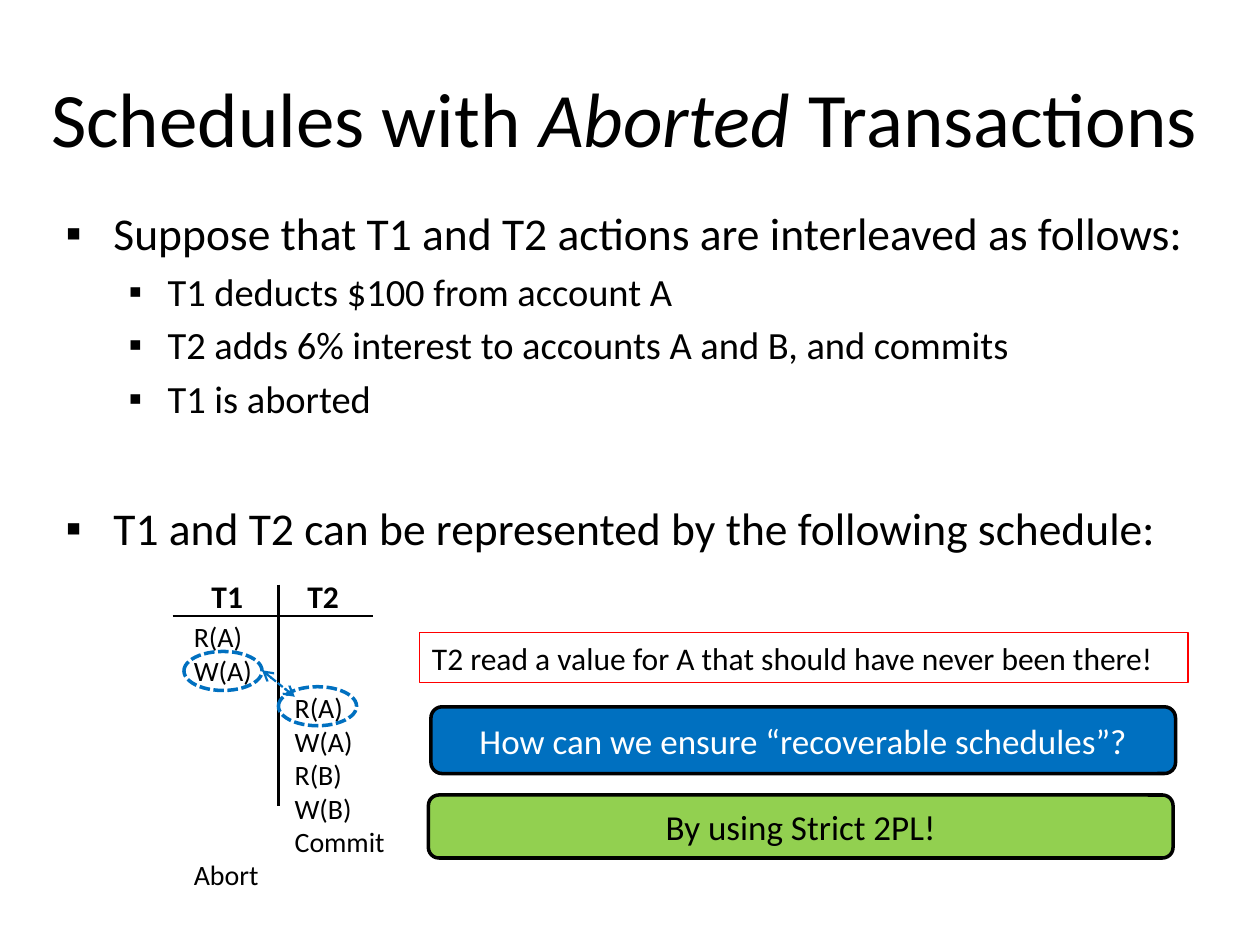
from dataclasses import dataclass

from lxml.etree import SubElement as Sub
from pptx import Presentation
from pptx.dml.color import RGBColor as Rgb
from pptx.enum.dml import MSO_LINE as Dash
from pptx.enum.shapes import MSO_CONNECTOR as Wire, MSO_SHAPE as Form
from pptx.enum.text import MSO_ANCHOR as Anchor, MSO_AUTO_SIZE as Fit, PP_ALIGN as Align
from pptx.oxml.ns import qn
from pptx.util import Inches, Pt


@dataclass(frozen=True)
class Theme:
    font: str = "Calibri"
    ink: str = "000000"
    pale: str = "FFFFFF"
    blue: str = "0070C0"
    green: str = "92D050"
    red: str = "FF0000"
    title: int = 44
    lead: int = 26
    point: int = 22
    call: int = 20
    note: int = 18
    step: int = 16


def apply(item, **vals):
    for name, val in vals.items():
        setattr(item, name, val)


class Deck:
    COLS, ROWS = 100, 75

    def __init__(self, theme):
        self.theme = theme
        self.show = Presentation()
        apply(self.show, slide_width=Inches(10), slide_height=Inches(7.5))
        self.slide = self.show.slides.add_slide(self.show.slide_layouts[1])
        self.shapes = self.slide.shapes

    def grid(self, *nums):
        units = (self.show.slide_width / self.COLS, self.show.slide_height / self.ROWS)
        return [round(num * units[i % 2]) for i, num in enumerate(nums)]

    def place(self, item, box):
        apply(item, **dict(zip(("left", "top", "width", "height"), self.grid(*box))))

    def run(self, para, text, size, color=None, **vals):
        run = para.add_run()
        run.text = text
        apply(run.font, name=self.theme.font, size=Pt(size), **vals)
        run.font.color.rgb = Rgb.from_string(color or self.theme.ink)

    def edge(self, item, color, width, dash=None):
        item.line.color.rgb = Rgb.from_string(color)
        apply(item.line, width=Pt(width), dash_style=dash)

    def title(self, box, parts):
        item = self.shapes.title
        self.place(item, box)
        apply(item.text_frame, vertical_anchor=Anchor.MIDDLE, auto_size=Fit.NONE)
        para = item.text_frame.paragraphs[0]
        para.alignment = Align.CENTER
        for text, slant in parts:
            self.run(para, text, self.theme.title, italic=slant)

    def list(self, box, items):
        item = self.slide.placeholders[1]
        self.place(item, box)
        frame = item.text_frame
        frame.auto_size = Fit.NONE
        sizes = (self.theme.lead, self.theme.point)
        dents = ((0.38, -0.38), (0.81, -0.31))
        for i, (level, text, gap) in enumerate(items):
            para = frame.add_paragraph() if i else frame.paragraphs[0]
            apply(para, level=level, space_before=Pt(gap or sizes[level] * 0.2))
            props = para._p.get_or_add_pPr()
            for key, val in zip(("marL", "indent"), dents[level]):
                props.set(key, str(Inches(val)))
            Sub(props, qn("a:buFont"), typeface="Arial")
            Sub(props, qn("a:buChar"), char="▪")
            self.run(para, text, sizes[level])

    def text(self, box, lines, size, gaps=None, **vals):
        item = self.shapes.add_textbox(*self.grid(*box))
        frame = item.text_frame
        apply(frame, word_wrap=False, auto_size=Fit.SHAPE_TO_FIT_TEXT)
        for i, line in enumerate(lines):
            para = frame.add_paragraph() if i else frame.paragraphs[0]
            if gaps and line in gaps:
                para.space_before = Pt(gaps[line])
            self.run(para, line, size, **vals)
        return item

    def shape(self, form, box, fill=None):
        item = self.shapes.add_shape(form, *self.grid(*box))
        item.shadow.inherit = False
        if fill:
            item.fill.solid()
            item.fill.fore_color.rgb = Rgb.from_string(fill)
        else:
            item.fill.background()
        return item

    def call(self, box, text, fill, color):
        item = self.shape(Form.ROUNDED_RECTANGLE, box, fill)
        self.edge(item, self.theme.ink, 2)
        item.text_frame.vertical_anchor = Anchor.MIDDLE
        para = item.text_frame.paragraphs[0]
        para.alignment = Align.CENTER
        self.run(para, text, self.theme.call, color)

    def ring(self, box):
        self.edge(self.shape(Form.OVAL, box), self.theme.blue, 2, Dash.SQUARE_DOT)

    def line(self, ends, color, width, dash=None, heads=False):
        item = self.shapes.add_connector(Wire.STRAIGHT, *self.grid(*ends))
        self.edge(item, color, width, dash)
        if heads:
            for tag in ("a:headEnd", "a:tailEnd"):
                Sub(item.line._get_or_add_ln(), qn(tag), type="arrow")
        Sub(item._element.spPr, qn("a:effectLst"))


def main():
    look = Theme()
    deck = Deck(look)
    deck.title((0.8, 3, 97.5, 12.5), [
        ("Schedules with ", False), ("Aborted", True), (" Transactions", False)])
    deck.list((4.2, 15.8, 94.5, 57.5), [
        (0, "Suppose that T1 and T2 actions are interleaved as follows:", None),
        (1, "T1 deducts $100 from account A", None),
        (1, "T2 adds 6% interest to accounts A and B, and commits", None),
        (1, "T1 is aborted", None),
        (0, "T1 and T2 can be represented by the following schedule:", 45)])

    for ends in ((22.1, 46.4, 22.1, 64), (13.7, 48.9, 29.6, 48.9)):
        deck.line(ends, look.ink, 1.5)
    for left, name in ((15.8, "T1"), (23.4, "T2")):
        deck.text((left, 45.3, 4.5, 4), [name], look.note, bold=True)
    row = look.step * 1.22
    deck.text((14.4, 48.7, 7.2, 22.6), ["R(A)", "W(A)", "Abort"], look.step,
              {"Abort": 5 * row})
    deck.text((22.4, 48.9 + 2 * row / 7.2, 9.2, 14.5),
              ["R(A)", "W(A)", "R(B)", "W(B)", "Commit"], look.step)

    deck.call((34.2, 56.1, 59.1, 5.3), "How can we ensure “recoverable schedules”?",
              look.blue, look.pale)
    for left, top in ((22.1, 54.5), (14.6, 51.7)):
        deck.ring((left, top, 6.2, 3.1))
    deck.line((20.8, 53.2, 23.4, 55.3), look.blue, 1.25, Dash.SQUARE_DOT, True)
    deck.call((34, 63.1, 59.1, 5), "By using Strict 2PL!", look.green, look.ink)
    note = deck.text((33.3, 50.2, 61, 4),
                     ["T2 read a value for A that should have never been there!"], look.note)
    deck.edge(note, look.red, 0.75)
    deck.show.save("out.pptx")


if __name__ == "__main__":
    main()
